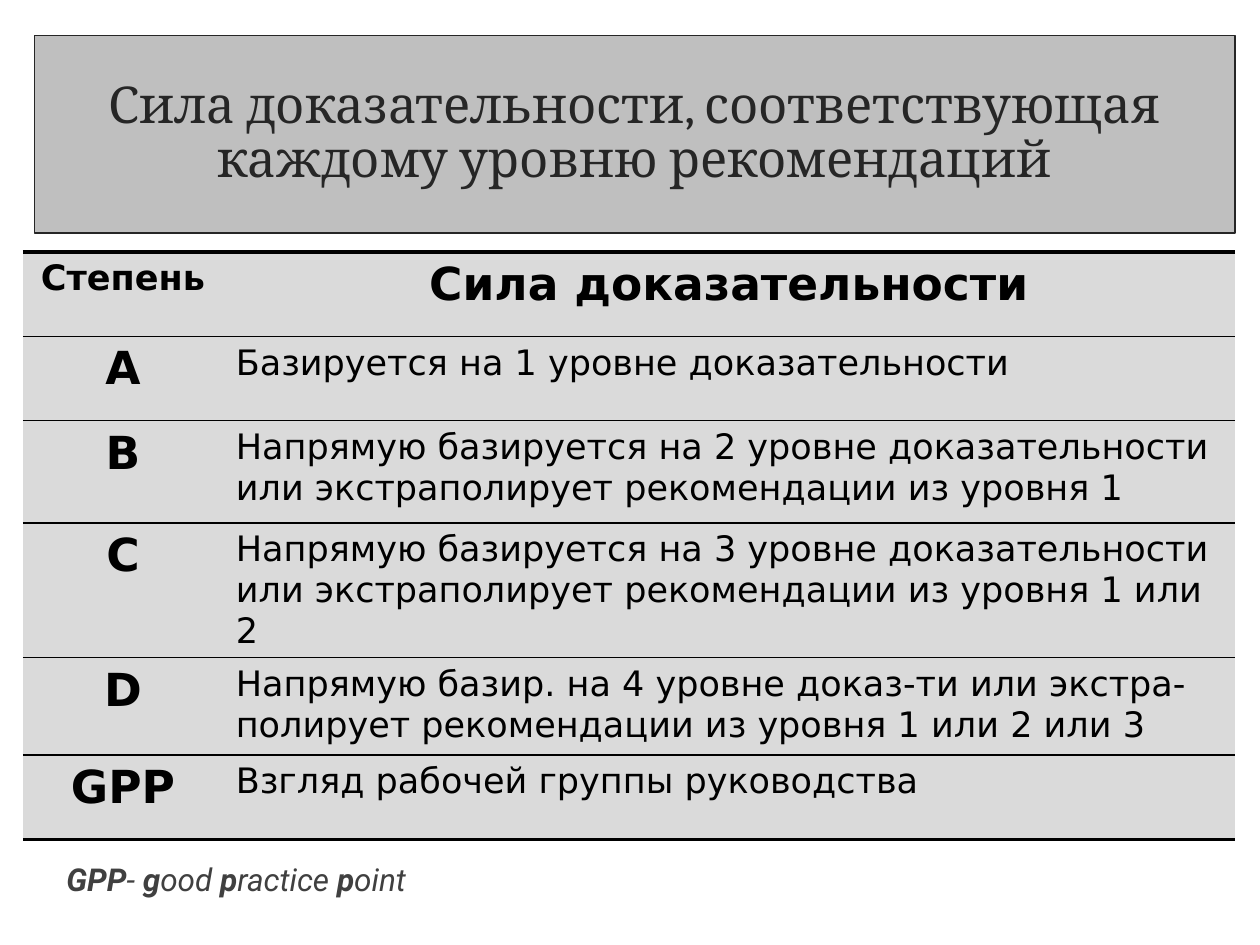
from lxml import etree
from pptx import Presentation
from pptx.dml.color import RGBColor
from pptx.enum.shapes import MSO_SHAPE
from pptx.enum.text import MSO_ANCHOR, PP_ALIGN
from pptx.oxml.ns import qn
from pptx.util import Cm, Pt

RECTANGLE = MSO_SHAPE.RECTANGLE
MIDDLE = MSO_ANCHOR.MIDDLE
LEFT, CENTER = PP_ALIGN.LEFT, PP_ALIGN.CENTER

BLACK = RGBColor(0x00, 0x00, 0x00)
INK = RGBColor(0x26, 0x26, 0x26)
NOTE_GRAY = RGBColor(0x40, 0x40, 0x40)
TITLE_GRAY = RGBColor(0xBF, 0xBF, 0xBF)
CELL_GRAY = RGBColor(0xDA, 0xDA, 0xDA)

TITLE = "Сила доказательности, соответствующая каждому уровню рекомендаций"
HEADER = ("Степень", "Сила доказательности")
GRADES = [
    ("A", "Базируется на 1 уровне доказательности"),
    ("B", "Напрямую базируется на 2 уровне доказательности "
          "или экстраполирует рекомендации из уровня 1"),
    ("C", "Напрямую базируется на 3 уровне доказательности "
          "или экстраполирует рекомендации из уровня 1 или 2"),
    ("D", "Напрямую базир. на 4 уровне доказ-ти или "
          "экстра-полирует рекомендации из уровня 1 или 2 или 3"),
    ("GPP", "Взгляд рабочей группы руководства"),
]
GRADE_WIDTH = 4.04
ROW_HEIGHTS = (1.7, 1.7, 2.06, 1.96, 1.96, 1.7)
THIN, THICK = 1, 2.25
# Bold and regular pieces alternate, starting with bold
NOTE_PIECES = ("GPP", "- ", "g", "ood ", "p", "ractice ", "p", "oint")


def add_run(paragraph, text, font_name, size, color, bold=False, italic=False):
    run = paragraph.add_run()
    run.text = text
    font = run.font
    font.name, font.size = font_name, Pt(size)
    font.bold, font.italic = bold, italic
    font.color.rgb = color


def set_borders(cell, top, bottom):
    """Black rules above and below, none at the sides."""
    properties = cell._tc.get_or_add_tcPr()
    widths = {"a:lnL": 0, "a:lnR": 0, "a:lnT": top, "a:lnB": bottom}
    for index, (tag, width) in enumerate(widths.items()):
        line = etree.Element(qn(tag), w=str(Pt(width)))
        if width:
            fill = etree.SubElement(line, qn("a:solidFill"))
            etree.SubElement(fill, qn("a:srgbClr"), val=str(BLACK))
        else:
            etree.SubElement(line, qn("a:noFill"))
        properties.insert(index, line)


def add_title(slide, left, top, width, height):
    banner = slide.shapes.add_shape(
        RECTANGLE, Cm(left), Cm(top), Cm(width), Cm(height))
    banner.shadow.inherit = False
    banner.fill.solid()
    banner.fill.fore_color.rgb = TITLE_GRAY
    banner.line.color.rgb = INK
    banner.line.width = Pt(0.75)
    frame = banner.text_frame
    frame.word_wrap = True
    frame.vertical_anchor = MIDDLE
    paragraph = frame.paragraphs[0]
    paragraph.alignment = CENTER
    paragraph.line_spacing = 0.9
    add_run(paragraph, TITLE, "Cambria", 29, INK)


def add_grade_table(slide, left, top, width):
    rows = [HEADER, *GRADES]
    table = slide.shapes.add_table(
        len(rows), len(HEADER), Cm(left), Cm(top),
        Cm(width), Cm(sum(ROW_HEIGHTS))).table
    table.first_row = table.horz_banding = False
    table.columns[0].width = Cm(GRADE_WIDTH)
    table.columns[1].width = Cm(width - GRADE_WIDTH)
    last = len(rows) - 1
    for r, texts in enumerate(rows):
        table.rows[r].height = Cm(ROW_HEIGHTS[r])
        for c, text in enumerate(texts):
            cell = table.cell(r, c)
            cell.fill.solid()
            cell.fill.fore_color.rgb = CELL_GRAY
            set_borders(cell, THICK if r == 0 else THIN,
                        THICK if r == last else THIN)
            # Grades and the header are bold and centred
            is_heading = r == 0 or c == 0
            is_large = (r == 0) != (c == 0)
            paragraph = cell.text_frame.paragraphs[0]
            paragraph.alignment = CENTER if is_heading else LEFT
            add_run(paragraph, text, "DejaVu Sans", 26 if is_large else 20,
                    BLACK, bold=is_heading)


def add_note(slide, left, top, width, height):
    note = slide.shapes.add_textbox(Cm(left), Cm(top), Cm(width), Cm(height))
    frame = note.text_frame
    frame.word_wrap = True
    for index, piece in enumerate(NOTE_PIECES):
        add_run(frame.paragraphs[0], piece, "Roboto", 18, NOTE_GRAY,
                bold=index % 2 == 0, italic=True)


def main():
    presentation = Presentation()
    presentation.slide_width, presentation.slide_height = Cm(25.4), Cm(19.05)
    slide = presentation.slides.add_slide(presentation.slide_layouts[6])
    add_title(slide, 0.69, 0.71, 24.21, 3.99)
    add_grade_table(slide, 0.46, 5.08, 24.44)
    add_note(slide, 1.09, 17.22, 23.39, 1.3)
    presentation.save("out.pptx")


if __name__ == "__main__":
    main()
